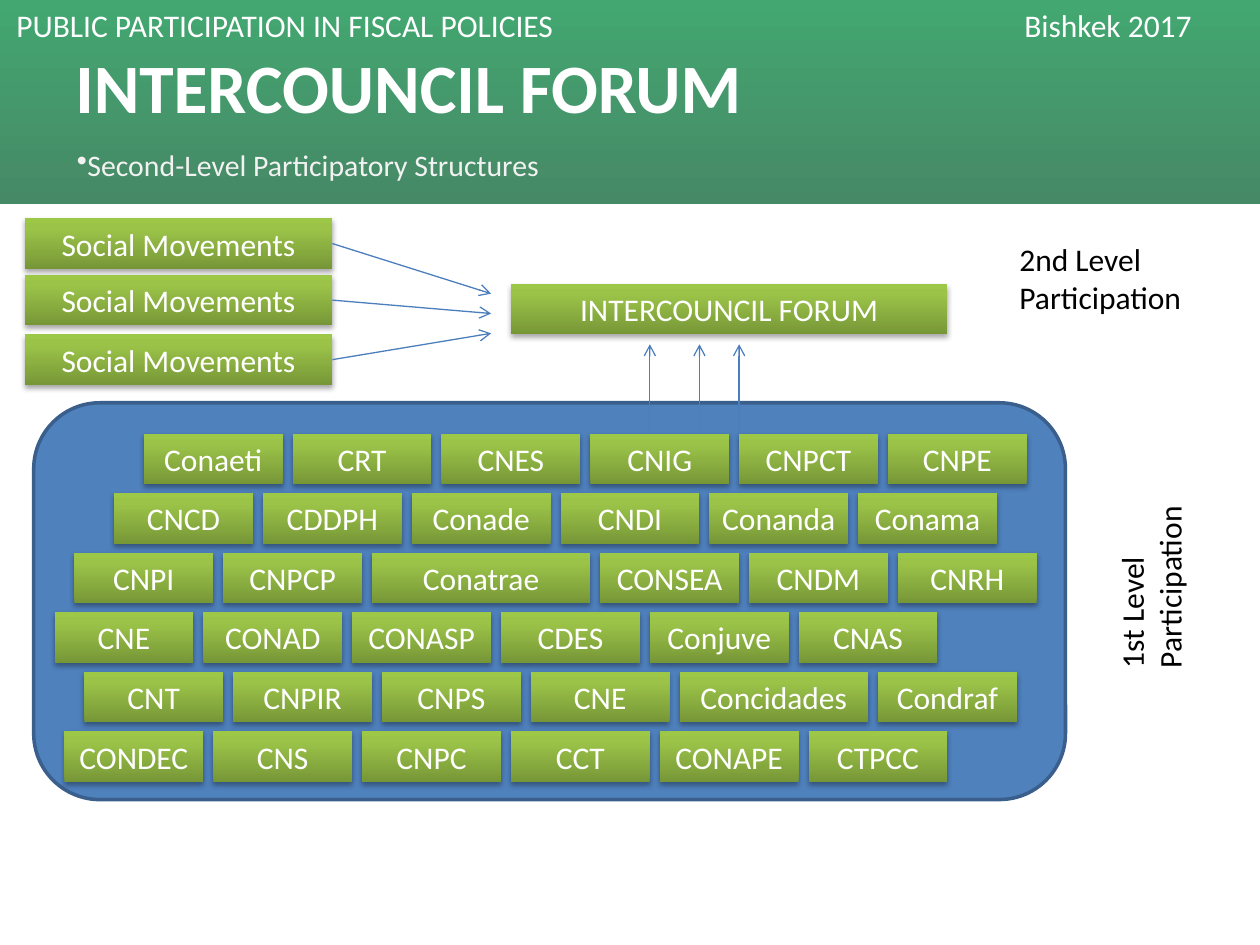
from dataclasses import dataclass

from lxml import etree
from pptx import Presentation
from pptx import util as u
from pptx.dml.color import RGBColor
from pptx.enum import shapes, text
from pptx.oxml.ns import qn


@dataclass(frozen=True)
class Theme:
    font: str = "Calibri"
    white: str = "FFFFFF"
    pale: str = "F2F2F2"
    ink: str = "000000"
    panel: str = "4F81BD"
    edge: str = "3A5F8C"
    arrow: str = "4B7EBC"
    head: tuple = ((0, "43A771"), (100, "468966"))
    green: tuple = ((0, "779737"), (80, "9BC348"), (100, "9DC746"))
    body: float = 18
    sub: float = 17
    title: float = 39.6


@dataclass(frozen=True)
class Area:
    """A block on the grid: left, top, width and height in units."""
    x: float
    y: float
    w: float
    h: float

    def emu(self) -> list:
        return [unit(v) for v in (self.x, self.y, self.w, self.h)]


@dataclass(frozen=True)
class Row:
    """A row of councils: its left edge, names and any wider boxes."""
    x: float
    names: str
    wide: tuple = ()


T = Theme()
COLS = 127  # the slide is 127 units wide
HIGH = 5.1  # box height
CELL, GAP, STEP = 14, 1, 6  # council width, gap, row pitch

deck = Presentation()
deck.slide_width, deck.slide_height = u.Inches(10), u.Inches(7.5)
slide = deck.slides.add_slide(deck.slide_layouts[6])


def unit(n: float) -> int:
    return round(n * deck.slide_width / COLS)


def sub(node, tag: str, **attrs):
    return etree.SubElement(node, qn(tag), attrs)


def write(frame, words: str, color: str, size: float = T.body, bold: bool = False) -> None:
    frame.text = words
    for para in frame.paragraphs:
        for run in para.runs:
            run.font.name, run.font.size = T.font, u.Pt(size)
            run.font.bold = bold
            run.font.color.rgb = RGBColor.from_string(color)


def shade(shape, stops: tuple, angle: float) -> None:
    shape.fill.gradient()
    shape.fill.gradient_angle = angle
    listing = shape._element.spPr.find(".//" + qn("a:gsLst"))
    for old in list(listing):
        listing.remove(old)
    for pos, color in stops:
        stop = sub(listing, "a:gs", pos=str(pos * 1000))
        sub(stop, "a:srgbClr", val=color)


def block(area: Area, kind=shapes.MSO_SHAPE.RECTANGLE):
    shape = slide.shapes.add_shape(kind, *area.emu())
    shape.shadow.inherit = False
    shape.line.fill.background()
    return shape


def box(area: Area, words: str):
    """Green labelled box with a soft shadow."""
    shape = block(area)
    shade(shape, T.green, 90)
    effects = shape._element.spPr.find(qn("a:effectLst"))
    cast = sub(effects, "a:outerShdw", blurRad=str(u.Pt(3.1)), dist=str(u.Pt(1.8)),
               dir="5400000", rotWithShape="0")
    sub(sub(cast, "a:srgbClr", val=T.ink), "a:alpha", val="35000")
    frame = shape.text_frame
    frame.word_wrap = True
    frame.auto_size = text.MSO_AUTO_SIZE.SHAPE_TO_FIT_TEXT
    write(frame, words, T.white)
    frame.paragraphs[0].alignment = text.PP_ALIGN.CENTER
    return shape


def label(area: Area, words: str, color: str, size: float = T.body,
          bold: bool = False, wrap: bool = True, middle: bool = False):
    frame = slide.shapes.add_textbox(*area.emu()).text_frame
    frame.word_wrap = wrap
    if middle:
        frame.vertical_anchor = text.MSO_ANCHOR.MIDDLE
    write(frame, words, color, size, bold)
    return frame


def arrow(start: tuple, end: tuple, source=None) -> None:
    line = slide.shapes.add_connector(
        shapes.MSO_CONNECTOR.STRAIGHT, *map(unit, start + end))
    if source is not None:
        line.begin_connect(source, 3)
    line.line.color.rgb = RGBColor.from_string(T.arrow)
    line.line.width = u.Pt(0.75)
    props = line._element.spPr
    sub(props.find(qn("a:ln")), "a:tailEnd", type="arrow")
    sub(props, "a:effectLst")


# Header band
shade(block(Area(0, 0, COLS, 20.6)), T.head, 270)
banner = label(Area(0.4, 0, 124.2, HIGH),
               "PUBLIC PARTICIPATION IN FISCAL POLICIES\tBishkek 2017", T.white)
tabs = sub(banner.paragraphs[0]._p.get_or_add_pPr(), "a:tabLst")
sub(tabs, "a:tab", pos=str(u.Inches(8)), algn="l")
label(Area(6.35, 3.8, 114.3, 9.8), "INTERCOUNCIL FORUM", T.white, T.title,
      bold=True, middle=True)
note = label(Area(6.5, 13.6, 114, 6), "Second-Level Participatory Structures",
             T.pale, T.sub, middle=True)
bullet = note.paragraphs[0]._p.get_or_add_pPr()
bullet.set("marL", "0")
bullet.set("indent", "0")
sub(bullet, "a:buChar", char="•")

# First level: panel, upward arrows, council boxes
panel = block(Area(3.4, 40.6, 104, 40), shapes.MSO_SHAPE.ROUNDED_RECTANGLE)
panel.fill.solid()
panel.fill.fore_color.rgb = RGBColor.from_string(T.panel)
panel.line.color.rgb = RGBColor.from_string(T.edge)
panel.line.width = u.Pt(2)

for x in (65.5, 70.5, 74.5):
    arrow((x, 45.6), (x, 34.7))

ROWS = (
    Row(14.5, "Conaeti CRT CNES CNIG CNPCT CNPE"),
    Row(11.5, "CNCD CDDPH Conade CNDI Conanda Conama"),
    Row(7.5, "CNPI CNPCP Conatrae CONSEA CNDM CNRH", (("Conatrae", 22),)),
    Row(5.5, "CNE CONAD CONASP CDES Conjuve CNAS"),
    Row(8.5, "CNT CNPIR CNPS CNE Concidades Condraf", (("Concidades", 19),)),
    Row(6.5, "CONDEC CNS CNPC CCT CONAPE CTPCC"),
)
for i, row in enumerate(ROWS):
    left = row.x
    for name in row.names.split():
        width = dict(row.wide).get(name, CELL)
        box(Area(left, 43.7 + i * STEP, width, HIGH), name)
        left += width + GAP

# Second level: forum and the movements that feed it
box(Area(51.5, 28.6, 44, HIGH), "INTERCOUNCIL FORUM")
for top, tip in ((22, 29.6), (27.7, 31.6), (33.7, 33.6)):
    group = box(Area(2.5, top, 31, HIGH), "Social Movements")
    arrow((33.5, top + HIGH / 2), (49.5, tip), group)

# Level captions
label(Area(101.5, 23.6, 19, 9), "2nd Level\nParticipation", T.ink, wrap=False)
side = label(Area(111.5, 50.8, 10.3, 17.8), "1st Level\nParticipation", T.ink, wrap=False)
side._txBody.find(qn("a:bodyPr")).set("vert", "vert270")

deck.save("out.pptx")
